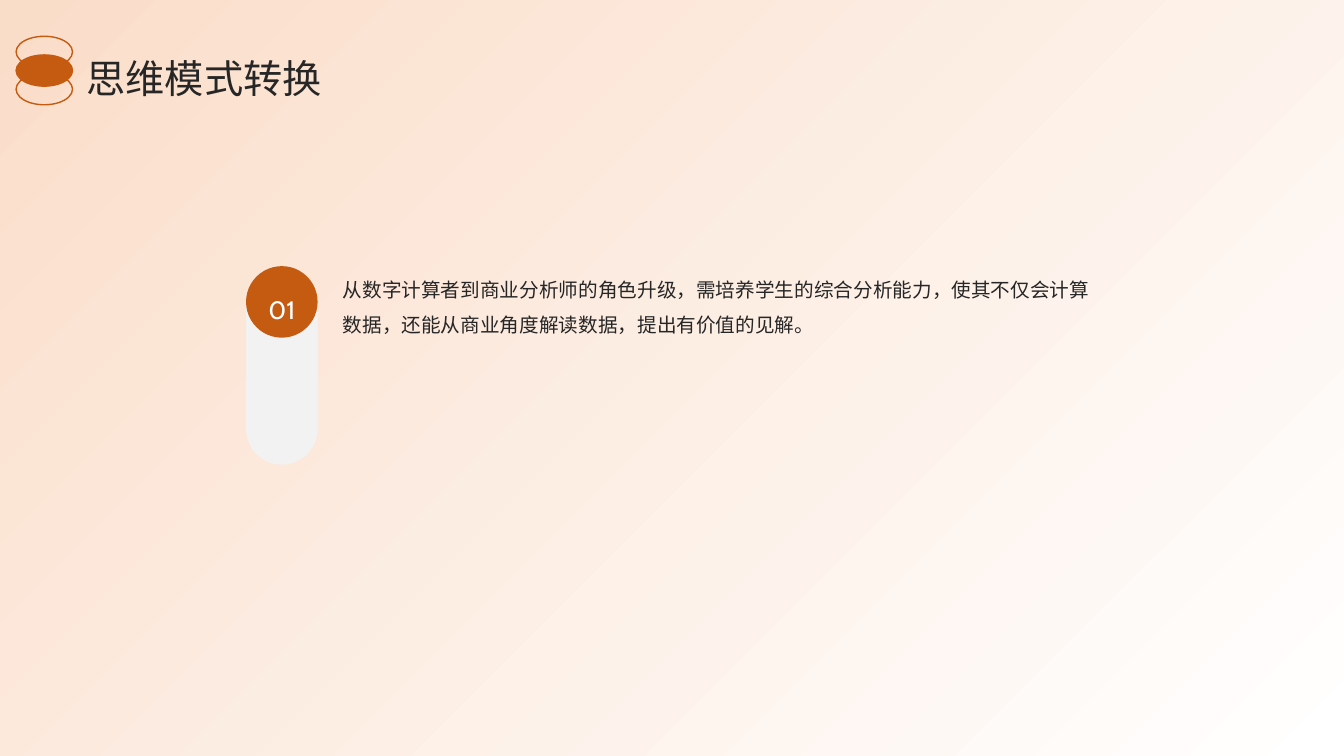
from lxml.etree import SubElement
from pptx import Presentation
from pptx.dml.color import RGBColor
from pptx.enum.shapes import MSO_SHAPE as Preset
from pptx.enum.text import MSO_ANCHOR as Anchor, MSO_AUTO_SIZE as AutoSize, PP_ALIGN as Align
from pptx.oxml.ns import qn
from pptx.util import Inches, Pt

TITLE = "思维模式转换"
NUMBER = "01"
BODY = "从数字计算者到商业分析师的角色升级，需培养学生的综合分析能力，使其不仅会计算数据，还能从商业角度解读数据，提出有价值的见解。"

CHINESE_FONT, NUMBER_FONT = "Noto Sans CJK SC", "Cabin"
ORANGE, PEACH, GREY, INK, WHITE = "C55A11", "FADDC9", "F2F2F2", "262626", "FFFFFF"
WIDTH, HEIGHT = 13.33, 7.5
PILL_LEFT, PILL_TOP, PILL_WIDTH, PILL_HEIGHT = 2.44, 2.64, 0.71, 1.97
ICON_LEFT, ICON_TOP, ICON_STEP = 0.16, 0.36, 0.185
ICON_FILLS = [None, ORANGE, None]


def color(value):
    return RGBColor.from_string(value)


def add_shape(shapes, preset, box, fill=None, line=None):
    shape = shapes.add_shape(preset, *map(Inches, box))
    shape.shadow.inherit = False
    if fill:
        shape.fill.solid()
        shape.fill.fore_color.rgb = color(fill)
    else:
        shape.fill.background()
    if line:
        shape.line.color.rgb = color(line)
        shape.line.width = Pt(1)
    else:
        shape.line.fill.background()
    return shape


def write_text(shape, text, size, font, ink, spacing, align=Align.LEFT, anchor=Anchor.TOP):
    frame = shape.text_frame
    frame.word_wrap = True
    frame.auto_size = AutoSize.NONE
    frame.vertical_anchor = anchor
    frame.margin_left = frame.margin_right = frame.margin_top = frame.margin_bottom = 0
    paragraph = frame.paragraphs[0]
    paragraph.alignment = align
    paragraph.line_spacing = spacing
    paragraph.space_before = Pt(0)
    run = paragraph.add_run()
    run.text = text
    run.font.size = Pt(size)
    run.font.name = font
    run.font.color.rgb = color(ink)
    SubElement(run.font._element, qn("a:ea")).set("typeface", font)


def add_background(slide):
    background = add_shape(slide.shapes, Preset.RECTANGLE, (0, 0, WIDTH, HEIGHT))
    background.fill.gradient()
    background.fill.gradient_angle = 135
    for stop, position, value in zip(background.fill.gradient_stops, (0, 1), (WHITE, PEACH)):
        stop.position = position
        stop.color.rgb = color(value)


def add_point(slide):
    pill = add_shape(slide.shapes, Preset.ROUNDED_RECTANGLE,
                     (PILL_LEFT, PILL_TOP, PILL_WIDTH, PILL_HEIGHT), GREY)
    pill.adjustments[0] = 0.5
    add_shape(slide.shapes, Preset.OVAL, (PILL_LEFT, PILL_TOP, PILL_WIDTH, PILL_WIDTH), ORANGE)
    body = slide.shapes.add_textbox(*map(Inches, (3.4, PILL_TOP, 7.48, 2.77)))
    write_text(body, BODY, 14, CHINESE_FONT, INK, 1.5)
    number = slide.shapes.add_textbox(*map(Inches, (2.33, 2.8, 0.93, 0.38)))
    write_text(number, NUMBER, 18, NUMBER_FONT, WHITE, 1.5, Align.CENTER, Anchor.MIDDLE)


def add_title(slide):
    title = slide.shapes.title
    title.left, title.top, title.width, title.height = map(Inches, (0.86, 0.49, 11.67, 0.51))
    write_text(title, TITLE, 28, CHINESE_FONT, INK, 1.1, anchor=Anchor.MIDDLE)
    title.element.getparent().append(title.element)


def add_icon(slide):
    icon = slide.shapes.add_group_shape()
    for index, fill in reversed(list(enumerate(ICON_FILLS))):
        top = ICON_TOP + index * ICON_STEP
        add_shape(icon.shapes, Preset.OVAL, (ICON_LEFT, top, 0.56, 0.31), fill, ORANGE)


def main():
    presentation = Presentation()
    presentation.slide_width, presentation.slide_height = Inches(WIDTH), Inches(HEIGHT)
    slide = presentation.slides.add_slide(presentation.slide_layouts[5])
    add_background(slide)
    add_point(slide)
    add_title(slide)
    add_icon(slide)
    presentation.save("out.pptx")


if __name__ == "__main__":
    main()
